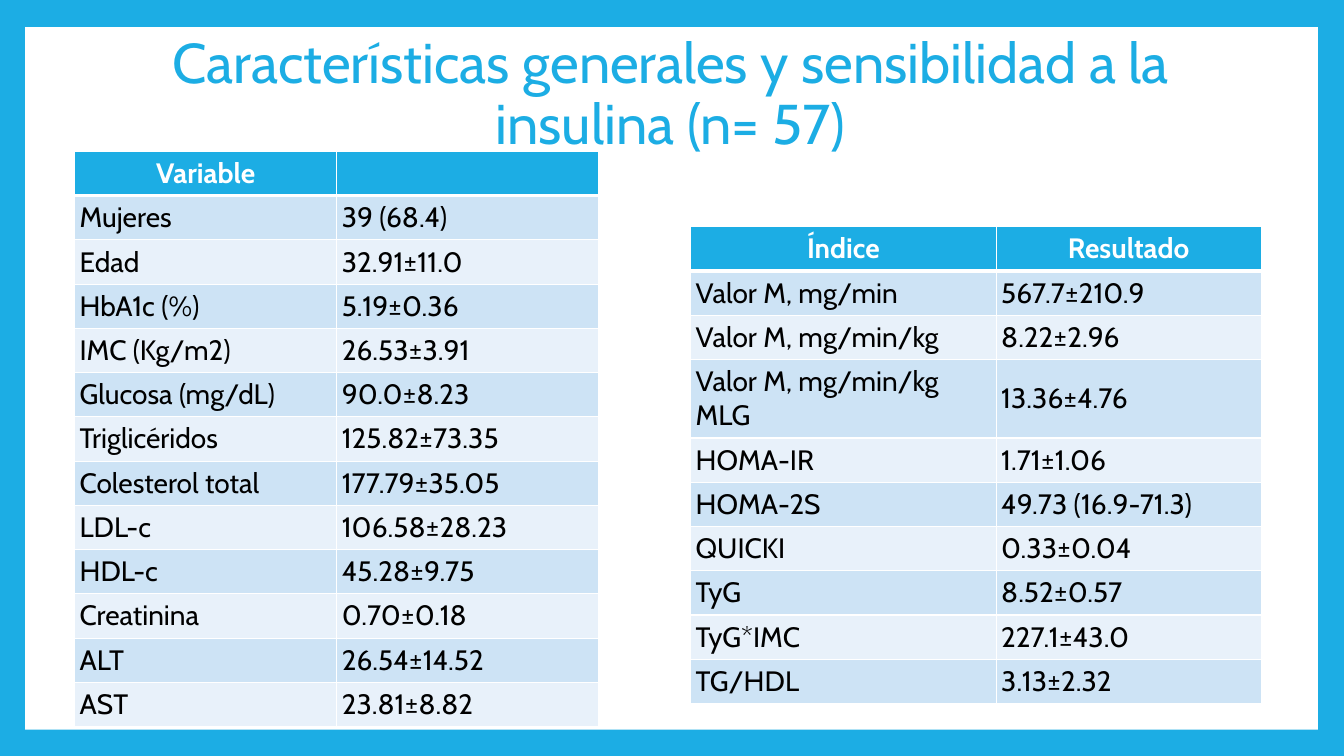
"""Build a slide with two tables of general characteristics and insulin sensitivity."""
from lxml.etree import SubElement
from pptx import Presentation
from pptx.dml.color import RGBColor
from pptx.enum.shapes import MSO_SHAPE
from pptx.enum.text import MSO_ANCHOR, MSO_AUTO_SIZE, PP_ALIGN
from pptx.oxml.ns import qn
from pptx.util import Emu, Pt

PX = 9144
ROW_HEIGHT = 43
CELL_MARGIN = 5
BLUE = RGBColor(0x1C, 0xAD, 0xE4)
BAND_DARK = RGBColor(0xCD, 0xE3, 0xF5)
BAND_LIGHT = RGBColor(0xE8, 0xF1, 0xFA)
WHITE = RGBColor(0xFF, 0xFF, 0xFF)
BLACK = RGBColor(0x00, 0x00, 0x00)

CHARACTERISTICS = [
    ("Variable", ""),
    ("Mujeres", "39 (68.4)"),
    ("Edad", "32.91±11.0"),
    ("HbA1c (%)", "5.19±0.36"),
    ("IMC (Kg/m2)", "26.53±3.91"),
    ("Glucosa (mg/dL)", "90.0±8.23"),
    ("Triglicéridos", "125.82±73.35"),
    ("Colesterol total", "177.79±35.05"),
    ("LDL-c", "106.58±28.23"),
    ("HDL-c", "45.28±9.75"),
    ("Creatinina", "0.70±0.18"),
    ("ALT", "26.54±14.52"),
    ("AST", "23.81±8.82"),
]
SENSITIVITY = [
    ("Índice", "Resultado"),
    ("Valor M, mg/min", "567.7±210.9"),
    ("Valor M, mg/min/kg", "8.22±2.96"),
    ("Valor M, mg/min/kg MLG", "13.36±4.76"),
    ("HOMA-IR", "1.71±1.06"),
    ("HOMA-2S", "49.73 (16.9-71.3)"),
    ("QUICKI", "0.33±0.04"),
    ("TyG", "8.52±0.57"),
    ("TyG*IMC", "227.1±43.0"),
    ("TG/HDL", "3.13±2.32"),
]
TABLES = [
    (74, 150, (260, 260), CHARACTERISTICS),
    (685, 225, (303, 263), SENSITIVITY),
]


def write_text(text_frame, text, size=20, color=BLACK, bold=False, align=PP_ALIGN.LEFT, spacing=1.0):
    paragraph = text_frame.paragraphs[0]
    paragraph.alignment = align
    paragraph.line_spacing = spacing
    paragraph.font.size = Pt(size)
    if text:
        run = paragraph.add_run()
        run.text = text
        run.font.name = "Cabin"
        run.font.size = Pt(size)
        run.font.bold = bold
        run.font.color.rgb = color


def add_borders(cell, top, bottom):
    properties = cell._tc.get_or_add_tcPr()
    for side, width in (("L", 1), ("R", 1), ("T", top), ("B", bottom)):
        line = SubElement(properties, qn(f"a:ln{side}"), w=str(Pt(width)))
        fill = SubElement(line, qn("a:solidFill"))
        SubElement(fill, qn("a:srgbClr"), val=str(WHITE))


presentation = Presentation()
presentation.slide_width = Emu(1333 * PX)
presentation.slide_height = Emu(750 * PX)
slide = presentation.slides.add_slide(presentation.slide_layouts[5])
slide.background.fill.solid()
slide.background.fill.fore_color.rgb = BLUE

panel = slide.shapes.add_shape(MSO_SHAPE.RECTANGLE, 25 * PX, 27 * PX, 1282 * PX, 697 * PX)
panel.shadow.inherit = False
panel.fill.solid()
panel.fill.fore_color.rgb = WHITE
panel.line.fill.background()
slide.shapes._spTree.insert(2, panel._element)

title = slide.shapes.title
title.left, title.top, title.width, title.height = (
    Emu(length * PX) for length in (125, 21, 1080, 148)
)
title.text_frame.word_wrap = True
title.text_frame.auto_size = MSO_AUTO_SIZE.NONE
title.text_frame.vertical_anchor = MSO_ANCHOR.MIDDLE
write_text(
    title.text_frame,
    "Características generales y sensibilidad a la insulina (n= 57)",
    size=40, color=BLUE, align=PP_ALIGN.CENTER, spacing=0.9,
)

for left, top, widths, rows in TABLES:
    frame = slide.shapes.add_table(
        len(rows), len(widths), left * PX, top * PX,
        sum(widths) * PX, len(rows) * ROW_HEIGHT * PX,
    )
    table = frame.table
    for column, width in zip(table.columns, widths):
        column.width = Emu(width * PX)
    for row_index, row in enumerate(rows):
        table.rows[row_index].height = Emu(ROW_HEIGHT * PX)
        header = row_index == 0
        band = BAND_DARK if row_index % 2 else BAND_LIGHT
        for column_index, text in enumerate(row):
            cell = table.cell(row_index, column_index)
            cell.margin_left = cell.margin_right = Emu(CELL_MARGIN * PX)
            cell.margin_top = cell.margin_bottom = Emu(CELL_MARGIN * PX)
            cell.vertical_anchor = MSO_ANCHOR.MIDDLE
            add_borders(cell, top=3 if row_index == 1 else 1, bottom=3 if header else 1)
            cell.fill.solid()
            cell.fill.fore_color.rgb = BLUE if header else band
            write_text(
                cell.text_frame, text, bold=header,
                color=WHITE if header else BLACK,
                align=PP_ALIGN.CENTER if header else PP_ALIGN.LEFT,
            )

presentation.save("out.pptx")
